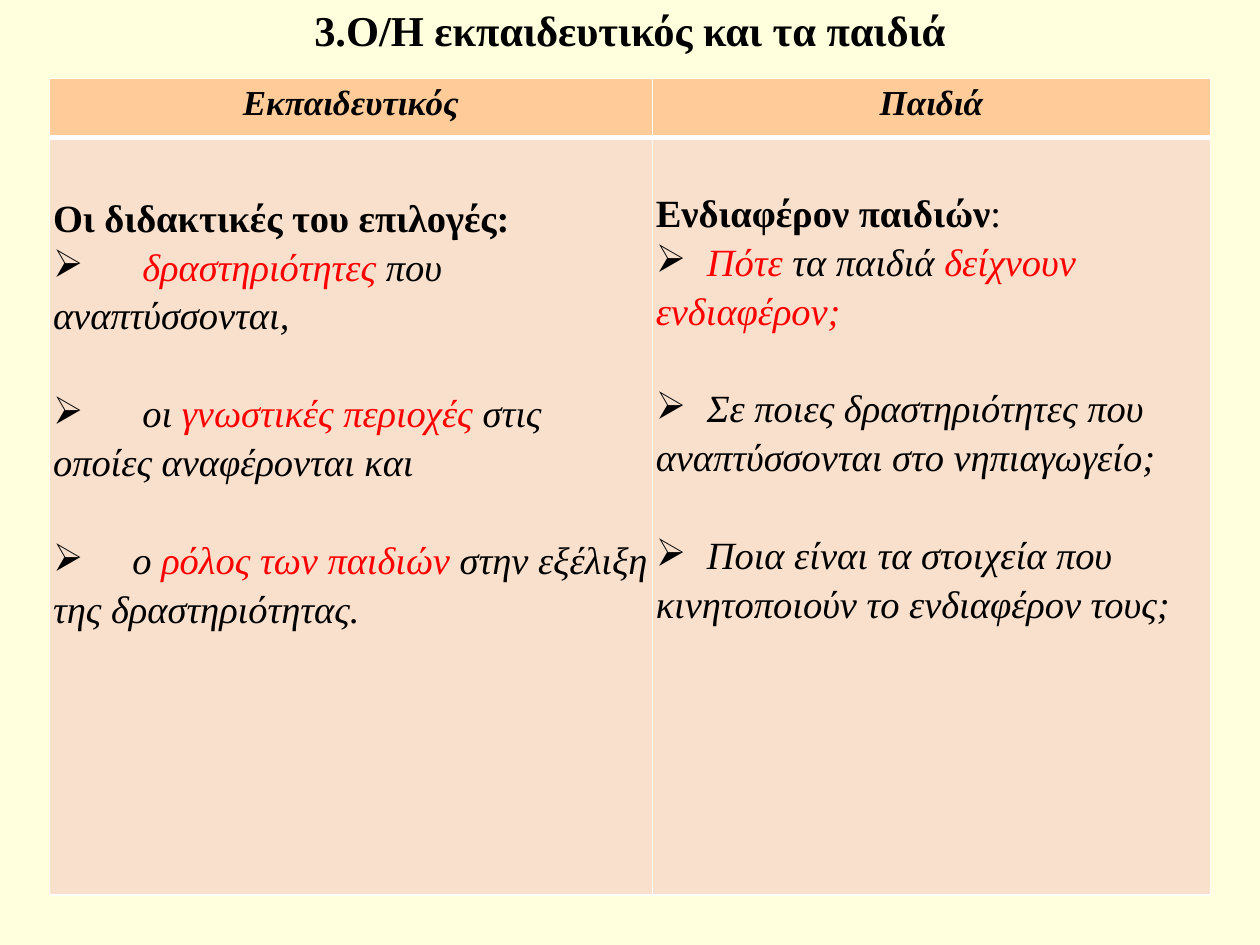
from lxml import etree
from pptx import Presentation
from pptx.dml.color import RGBColor
from pptx.enum.text import MSO_ANCHOR as Anchor, PP_ALIGN as Align
from pptx.oxml.ns import qn
from pptx.util import Cm, Pt

COLORS = {"page": "FFFFDD", "head": "FFCC99", "body": "F9E0CD",
          "rule": "FFFFFF", "ink": "000000", "key": "FF0000"}
FONT = "Times New Roman"
HEAD_SIZE, BODY_SIZE = 20, 22
ITEM_GAP = 28  # one body line between items

# Each item: tab position in cm, then (text, color) runs
TEACHER = {
    "title": "Εκπαιδευτικός",
    "top": 1.09,
    "lead": [("Οι διδακτικές του επιλογές:", True)],
    "items": [
        (1.8, [("δραστηριότητες ", "key"), ("που αναπτύσσονται,", "ink")]),
        (1.8, [("οι ", "ink"), ("γνωστικές περιοχές ", "key"),
               ("στις οποίες αναφέρονται και", "ink")]),
        (1.6, [("ο ", "ink"), ("ρόλος των παιδιών ", "key"),
               ("στην εξέλιξη της δραστηριότητας.", "ink")]),
    ],
}
CHILDREN = {
    "title": "Παιδιά",
    "top": 0.99,
    "lead": [("Ενδιαφέρον παιδιών", True), (":", False)],
    "items": [
        (1.03, [("Πότε ", "key"), ("τα παιδιά ", "ink"),
                ("δείχνουν ενδιαφέρον;", "key")]),
        (1.03, [("Σε ποιες δραστηριότητες που αναπτύσσονται στο νηπιαγωγείο;", "ink")]),
        (1.03, [("Ποια είναι τα στοιχεία που κινητοποιούν το ενδιαφέρον τους;", "ink")]),
    ],
}


def rgb(name):
    return RGBColor.from_string(COLORS[name])


def add_run(paragraph, text, size, color="ink", bold=False, italic=False):
    run = paragraph.add_run()
    run.text = text
    font = run.font
    font.name, font.size, font.bold, font.italic = FONT, Pt(size), bold, italic
    font.color.rgb = rgb(color)


def add_bullet(paragraph, tab):
    """Arrow bullet on the first line only; its text starts at the tab."""
    props = paragraph._p.get_or_add_pPr()
    props.set("marL", "0")
    props.set("indent", "0")
    etree.SubElement(props, qn("a:buChar")).set("char", "➢")
    stops = etree.SubElement(props, qn("a:tabLst"))
    stop = etree.SubElement(stops, qn("a:tab"))
    stop.set("pos", str(int(Cm(tab))))
    stop.set("algn", "l")


def style_cell(cell, fill, top=0, upper=1, lower=1):
    cell.margin_left = cell.margin_right = Cm(0.07)
    cell.margin_top, cell.margin_bottom = Cm(top), 0
    props = cell._tc.get_or_add_tcPr()
    for side, width in (("L", 1), ("R", 1), ("T", upper), ("B", lower)):
        line = etree.SubElement(props, qn("a:ln" + side))
        line.set("w", str(int(Pt(width))))
        solid = etree.SubElement(line, qn("a:solidFill"))
        etree.SubElement(solid, qn("a:srgbClr")).set("val", COLORS["rule"])
    cell.fill.solid()
    cell.fill.fore_color.rgb = rgb(fill)


def fill_header(cell, title):
    style_cell(cell, "head", lower=3)
    heading = cell.text_frame.paragraphs[0]
    heading.alignment = Align.CENTER
    heading.line_spacing = 1.15
    add_run(heading, title, HEAD_SIZE, bold=True, italic=True)


def fill_body(cell, topic):
    style_cell(cell, "body", top=topic["top"], upper=3)
    lead = cell.text_frame.paragraphs[0]
    lead.line_spacing = 1.15
    for text, bold in topic["lead"]:
        add_run(lead, text, BODY_SIZE, bold=bold)
    for index, (tab, pieces) in enumerate(topic["items"]):
        item = cell.text_frame.add_paragraph()
        add_bullet(item, tab)
        item.line_spacing = 1.15
        item.space_before = Pt(ITEM_GAP if index else 0)
        add_run(item, "\t", BODY_SIZE, italic=True)
        for text, color in pieces:
            add_run(item, text, BODY_SIZE, color, italic=True)


def add_title(slide, left, top, width, height):
    frame = slide.shapes.add_textbox(left, top, width, height).text_frame
    frame.word_wrap = True
    frame.vertical_anchor = Anchor.MIDDLE
    frame.margin_top = frame.margin_bottom = 0
    title = frame.paragraphs[0]
    title.alignment = Align.CENTER
    title.line_spacing = 0.8
    add_run(title, "3.Ο/Η εκπαιδευτικός και τα παιδιά", 24.3, bold=True)


def add_comparison(slide, left, top, width, height):
    table = slide.shapes.add_table(2, 2, left, top, width, height).table
    header_height, teacher_width = Cm(1.19), Cm(12.15)
    table.rows[0].height = header_height
    table.rows[1].height = height - header_height
    table.columns[0].width = teacher_width
    table.columns[1].width = width - teacher_width
    for column, topic in enumerate((TEACHER, CHILDREN)):
        fill_header(table.cell(0, column), topic["title"])
        fill_body(table.cell(1, column), topic)


def main():
    deck = Presentation()
    deck.slide_width, deck.slide_height = Cm(25.4), Cm(19.05)
    slide = deck.slides.add_slide(deck.slide_layouts[6])
    slide.background.fill.solid()
    slide.background.fill.fore_color.rgb = rgb("page")

    # Title strip across the top
    add_title(slide, 0, 0, deck.slide_width, Cm(1.4))
    # Teacher and children side by side, centred on the slide
    margin = Cm(1)
    add_comparison(slide, margin, Cm(1.58), deck.slide_width - 2 * margin, Cm(16.46))

    deck.save("out.pptx")


if __name__ == "__main__":
    main()
